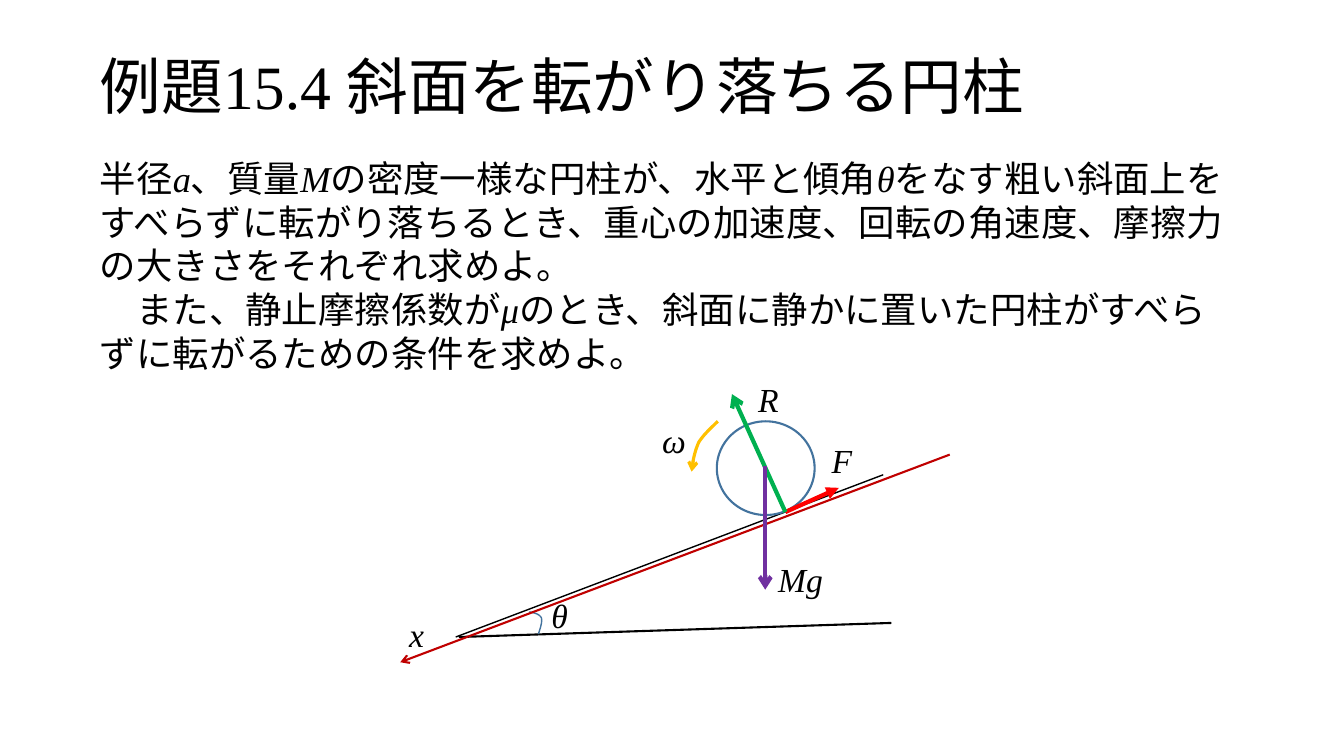
from lxml import etree
from pptx import Presentation
from pptx import util as u
from pptx.dml.color import RGBColor
from pptx.enum import shapes, text
from pptx.oxml.ns import qn

FONT = "Times New Roman"
COLORS = {
    "ink": "000000",
    "outline": "43739E",
    "axis": "C00000",
    "friction": "FF0000",
    "normal": "00B050",
    "rotation": "FFC000",
    "weight": "7030A0",
}
# Asterisks enclose the italic variables
PROBLEM = [
    "半径*a*、質量*M*の密度一様な円柱が、水平と傾角*θ*をなす粗い斜面上を"
    "すべらずに転がり落ちるとき、重心の加速度、回転の角速度、摩擦力の大きさを"
    "それぞれ求めよ。",
    "　また、静止摩擦係数が*μ*のとき、斜面に静かに置いた円柱がすべらずに"
    "転がるための条件を求めよ。",
]


def color(name):
    return RGBColor.from_string(COLORS[name])


def place(shape, left, top, width, height):
    shape.left, shape.top = u.Inches(left), u.Inches(top)
    shape.width, shape.height = u.Inches(width), u.Inches(height)


def style_font(paragraph, size):
    paragraph.font.name = FONT
    paragraph.font.size = u.Pt(size)
    paragraph.font.color.rgb = color("ink")


def style_line(shape, name, width, head=None):
    shape.line.color.rgb = color(name)
    shape.line.width = u.Pt(width)
    if head:
        line = shape.line._get_or_add_ln()
        etree.SubElement(line, qn("a:tailEnd"), type=head)


def add_title(slide, wording):
    title = slide.shapes.title
    place(title, 0.89, 0.16, 11.5, 1.45)
    title.text_frame.vertical_anchor = text.MSO_ANCHOR.MIDDLE
    heading = title.text_frame.paragraphs[0]
    heading.text = wording
    heading.alignment = text.PP_ALIGN.LEFT
    heading.line_spacing = 0.9
    style_font(heading, 44)


def add_problem(slide, passages):
    problem = slide.placeholders[1]
    place(problem, 0.89, 1.5, 11.5, 2.29)
    frame = problem.text_frame
    for index, passage in enumerate(passages):
        paragraph = frame.add_paragraph() if index else frame.paragraphs[0]
        paragraph.space_before = u.Pt(0)
        style_font(paragraph, 26)
        # Plain paragraph: no bullet, no hanging indent
        properties = paragraph._p.get_or_add_pPr()
        properties.set("marL", "0")
        properties.set("indent", "0")
        properties.insert_element_before(
            properties.makeelement(qn("a:buNone")), "a:tabLst", "a:defRPr", "a:extLst")
        for part, wording in enumerate(passage.split("*")):
            run = paragraph.add_run()
            run.text = wording
            run.font.italic = part % 2 == 1


def add_line(slide, start, end, name, width, head=None):
    points = [u.Inches(value) for value in (*start, *end)]
    line = slide.shapes.add_connector(shapes.MSO_CONNECTOR.STRAIGHT, *points)
    style_line(line, name, width, head)
    etree.SubElement(line._element.spPr, qn("a:effectLst"))


def bezier(p0, p1, p2, p3, steps=12):
    for step in range(1, steps + 1):
        t = step / steps
        weights = ((1 - t) ** 3, 3 * t * (1 - t) ** 2, 3 * t * t * (1 - t), t ** 3)
        yield tuple(sum(w * p[axis] for w, p in zip(weights, (p0, p1, p2, p3)))
                    for axis in (0, 1))


def add_arc(slide, controls, name, width, head=None):
    points = [controls[0]]
    for first in range(0, len(controls) - 1, 3):
        points += bezier(*controls[first:first + 4])
    start, *rest = [(u.Inches(x), u.Inches(y)) for x, y in points]
    builder = slide.shapes.build_freeform(*start)
    builder.add_line_segments(rest, close=False)
    arc = builder.convert_to_shape()
    arc.fill.background()
    arc.shadow.inherit = False
    style_line(arc, name, width, head)


def add_cylinder(slide):
    cylinder = slide.shapes.add_shape(
        shapes.MSO_SHAPE.OVAL, *map(u.Inches, (7.11, 4.18, 0.97, 0.93)))
    cylinder.fill.background()
    cylinder.shadow.inherit = False
    style_line(cylinder, "outline", 1.5)


def add_label(slide, symbol, left, top, width):
    label = slide.shapes.add_textbox(*map(u.Inches, (left, top, width, 0.5)))
    label.text_frame.word_wrap = False
    paragraph = label.text_frame.paragraphs[0]
    paragraph.text = symbol
    style_font(paragraph, 24)
    paragraph.font.italic = True


def main():
    deck = Presentation()
    deck.slide_width, deck.slide_height = u.Inches(13.33), u.Inches(7.5)
    slide = deck.slides.add_slide(deck.slide_layouts[1])

    # Problem statement
    add_title(slide, "例題15.4 斜面を転がり落ちる円柱")
    add_problem(slide, PROBLEM)

    # Slope, cylinder and angle
    add_line(slide, (4.52, 6.32), (8.76, 4.71), "ink", 1)
    add_cylinder(slide)
    add_line(slide, (4.55, 6.32), (8.84, 6.18), "ink", 1.5)
    add_arc(slide, [(5.25, 6.07), (5.3, 6.08), (5.35, 6.09), (5.37, 6.13),
                    (5.38, 6.17), (5.36, 6.23), (5.34, 6.29)], "outline", 1)

    # Axis, forces and rotation
    contact = (7.79, 5.08)
    add_line(slide, (9.42, 4.51), (3.97, 6.57), "axis", 1.5, "arrow")
    add_line(slide, contact, (8.32, 4.84), "friction", 3, "triangle")
    add_line(slide, contact, (7.26, 3.91), "normal", 3, "arrow")
    add_arc(slide, [(7.12, 4.18), (7.05, 4.25), (6.98, 4.31), (6.93, 4.39),
                    (6.89, 4.48), (6.87, 4.58), (6.86, 4.68)],
            "rotation", 2.25, "arrow")
    add_line(slide, (7.59, 4.62), (7.59, 5.85), "weight", 3, "arrow")

    # Symbols
    for symbol, left, top, width in [
        ("θ", 5.37, 5.85, 0.37),
        ("F", 8.15, 4.32, 0.41),
        ("R", 7.42, 3.71, 0.41),
        ("ω", 6.47, 4.12, 0.44),
        ("Mg", 7.62, 5.5, 0.65),
        ("x", 3.96, 6.04, 0.35),
    ]:
        add_label(slide, symbol, left, top, width)

    deck.save("out.pptx")


main()
